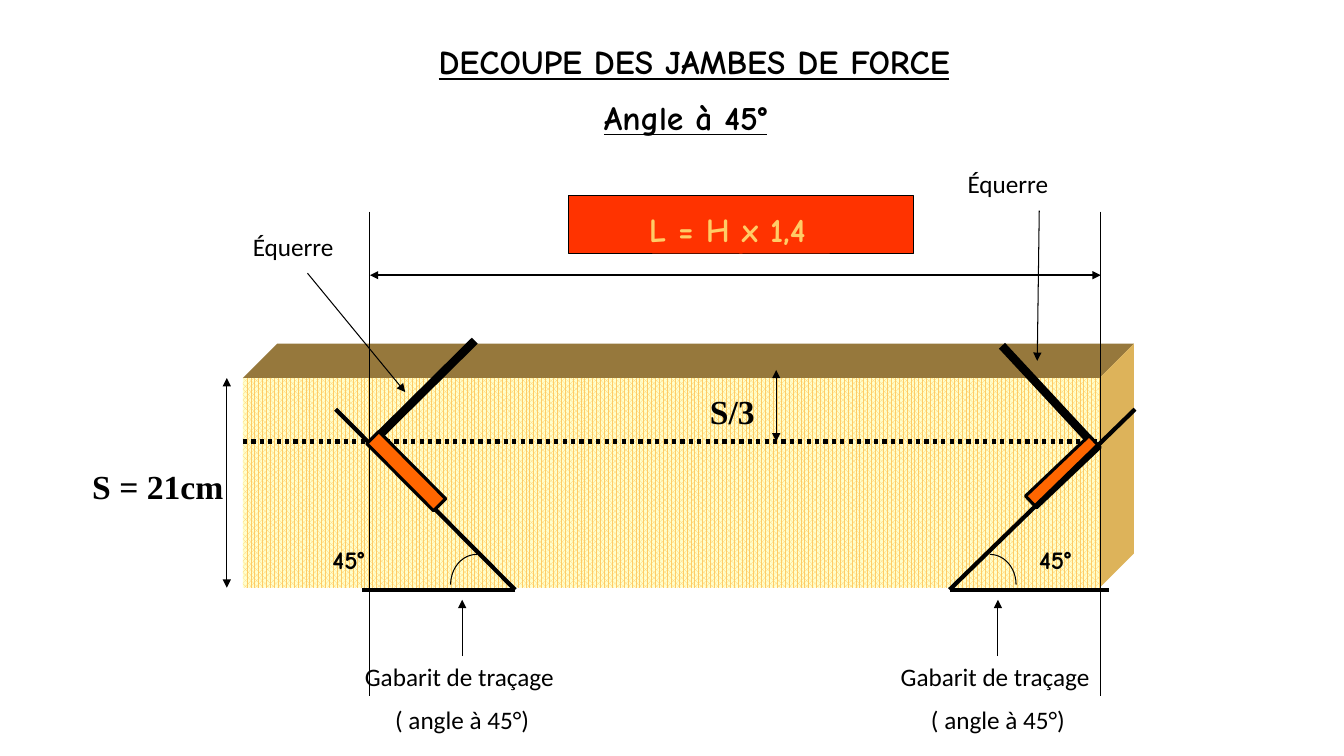
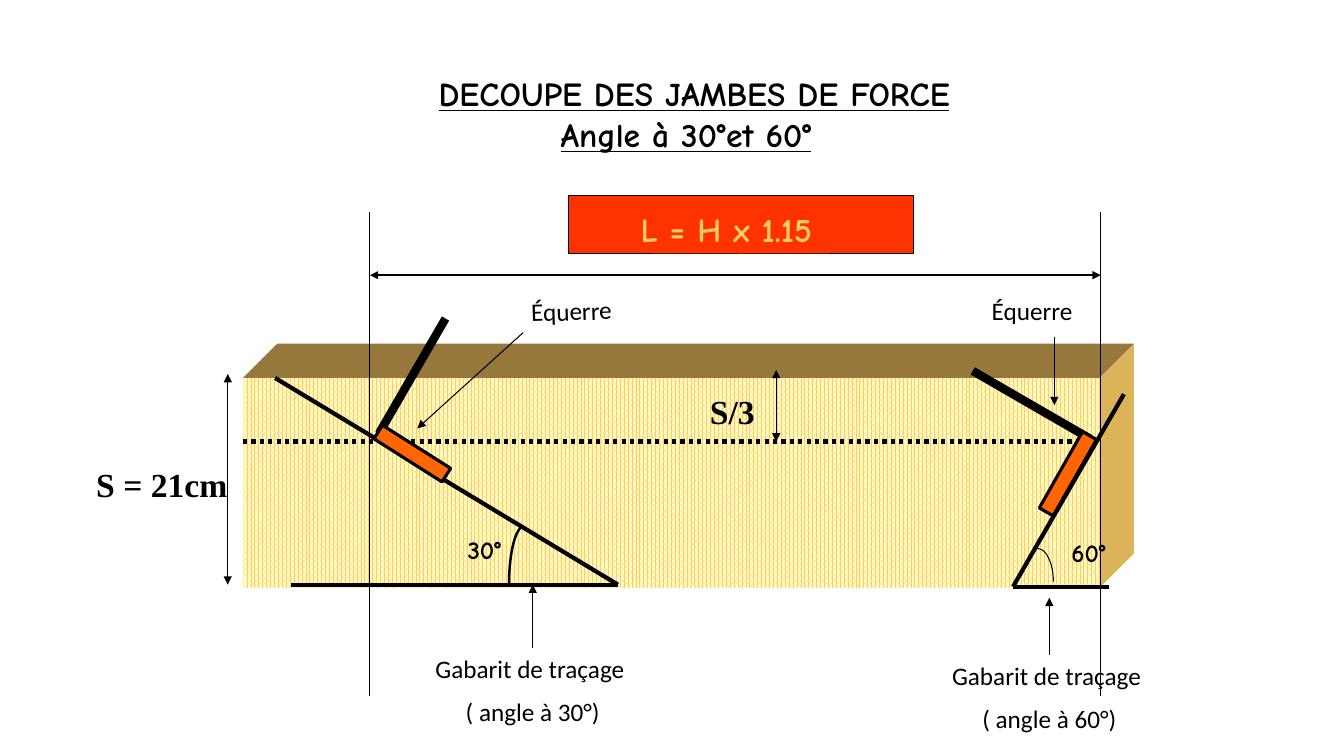
from dataclasses import dataclass
from typing import NamedTuple, Optional

from lxml.etree import SubElement
from pptx import Presentation
from pptx.dml.color import RGBColor
from pptx.enum.dml import MSO_LINE_DASH_STYLE as Dash, MSO_PATTERN_TYPE as Pattern
from pptx.enum.shapes import MSO_CONNECTOR_TYPE as Link, MSO_SHAPE as Preset
from pptx.enum.text import MSO_ANCHOR as Anchor, MSO_AUTO_SIZE as AutoSize, PP_ALIGN as Align
from pptx.oxml.ns import qn
from pptx.shapes.autoshape import Shape
from pptx.shapes.connector import Connector
from pptx.slide import Slide
from pptx.text.text import TextFrame
from pptx.util import Emu, Inches, Pt

# The grid has square cells; every length below is a number of cells.
CELL = Inches(0.1)
COLUMNS, ROWS = 133.33, 75

COLORS = {
    "ink": "000000",
    "wood": "FFCC66",
    "grain": "FFFFCC",
    "wood_top": "96783C",
    "wood_end": "DDB35A",
    "formula": "FF3300",
    "handle": "FF6600",
}

Point = tuple[float, float]


class Box(NamedTuple):
    left: float
    top: float
    width: float
    height: float


class TextStyle(NamedTuple):
    font: str
    size: int
    color: str = "ink"
    bold: bool = False
    underline: bool = False
    centred: bool = True
    wrap: bool = False


HEADING = TextStyle("Comic Neue", 24, bold=True, underline=True)
FORMULA = TextStyle("Comic Neue", 24, "wood", bold=True)
DIMENSION = TextStyle("Times New Roman", 24, bold=True)
ANGLE = TextStyle("Comic Neue", 18, bold=True, centred=False, wrap=True)
CAPTION = TextStyle("Calibri", 18, wrap=True)
TOOL_NAME = CAPTION._replace(centred=False)

BEAM = Box(24.1, 37.5, 85, 20.8)
BEAM_DEPTH = 3.4
CUT_LEFT, CUT_RIGHT = 36.7, 109.2
THIRD_ROW = 43.8
THIN, MEDIUM, THICK, BLADE = 0.75, 1.5, 3, 6


def cells(count: float) -> Emu:
    return Emu(round(count * CELL))


def rgb(name: str) -> RGBColor:
    return RGBColor.from_string(COLORS[name])


def write_text(frame: TextFrame, lines: tuple[str, ...], style: TextStyle) -> None:
    frame.word_wrap = style.wrap
    frame.auto_size = AutoSize.SHAPE_TO_FIT_TEXT
    frame.vertical_anchor = Anchor.TOP
    for index, line in enumerate(lines):
        para = frame.add_paragraph() if index else frame.paragraphs[0]
        para.alignment = Align.CENTER if style.centred else Align.LEFT
        if index:
            para.space_before = Pt(style.size / 2)
        span = para.add_run()
        span.text = line
        span.font.name = style.font
        span.font.size = Pt(style.size)
        span.font.bold = style.bold
        span.font.underline = style.underline
        span.font.color.rgb = rgb(style.color)


def add_label(page: Slide, box: Box, style: TextStyle, *lines: str) -> Shape:
    label = page.shapes.add_textbox(*map(cells, box))
    write_text(label.text_frame, lines, style)
    return label


def add_line(page: Slide, start: Point, end: Point, width: float = THIN,
             head: bool = False, tail: bool = False, dash: Optional[Dash] = None) -> Connector:
    line = page.shapes.add_connector(Link.STRAIGHT, *map(cells, (*start, *end)))
    line.line.width = Pt(width)
    line.line.color.rgb = rgb("ink")
    if dash is not None:
        line.line.dash_style = dash
    properties = line.element.spPr
    outline = properties.find(qn("a:ln"))
    for tag, wanted in (("a:headEnd", head), ("a:tailEnd", tail)):
        if wanted:
            SubElement(outline, qn(tag)).set("type", "triangle")
    SubElement(properties, qn("a:effectLst"))
    return line


def add_block(page: Slide, box: Box, color: str, width: float) -> Shape:
    """Add a plain rectangle with an ink outline."""
    block = page.shapes.add_shape(Preset.RECTANGLE, *map(cells, box))
    block.shadow.inherit = False
    block.fill.solid()
    block.fill.fore_color.rgb = rgb(color)
    block.line.color.rgb = rgb("ink")
    block.line.width = Pt(width)
    return block


@dataclass(frozen=True)
class SetSquare:
    """A set square: a black blade, an orange handle, and its name with an arrow."""
    blade: tuple[Point, Point]
    handle: Box
    handle_turn: float
    arrow: tuple[Point, Point]
    name_box: Box
    name_turn: float = 0

    def draw(self, page: Slide) -> None:
        add_line(page, *self.blade, width=BLADE)
        add_block(page, self.handle, "handle", 2.25).rotation = self.handle_turn
        add_line(page, *self.arrow, tail=True)
        add_label(page, self.name_box, TOOL_NAME, "Équerre").rotation = self.name_turn


@dataclass(frozen=True)
class Gauge:
    """A marking gauge: two lines from a corner, the angle's arc, and a caption."""
    angle: str
    corner: Point
    slope_end: Point
    base_end: float
    arc_center: Point
    arc_radii: Point
    angle_box: Box
    caption_box: Box
    arrow_tip: float
    arc_width: float = THIN

    def draw(self, page: Slide) -> None:
        add_line(page, self.corner, self.slope_end, THICK)
        add_line(page, self.corner, (self.base_end, self.corner[1]), THICK)
        self.draw_arc(page)
        add_label(page, self.angle_box, ANGLE, self.angle)
        caption = add_label(page, self.caption_box, CAPTION,
                            "Gabarit de traçage ", f"( angle à {self.angle})")
        middle = self.caption_box.left + self.caption_box.width / 2
        arrow = add_line(page, (middle, self.caption_box.top), (middle, self.arrow_tip), tail=True)
        arrow.begin_connect(caption, 0)

    def draw_arc(self, page: Slide) -> None:
        (x, y), (across, down) = self.arc_center, self.arc_radii
        box = Box(x - across, y - down, 2 * across, 2 * down)
        arc = page.shapes.add_shape(Preset.ARC, *map(cells, box))
        if self.base_end < self.corner[0]:
            # Angles count in units of 1/0.6 degree: from 180 to 270 degrees.
            arc.adjustments[0], arc.adjustments[1] = 108, 162
        arc.shadow.inherit = False
        arc.fill.background()
        arc.line.color.rgb = rgb("ink")
        arc.line.width = Pt(self.arc_width)


@dataclass(frozen=True)
class Lesson:
    title_top: float
    subtitle: str
    subtitle_box: Box
    formula: str
    formula_box: Box
    height_line: tuple[Point, Point]
    height_box: Box
    tools: tuple[SetSquare | Gauge, ...]


LESSONS = (
    Lesson(
        3.6, "Angle à 45°", Box(57.2, 9.1, 21.6, 5),
        "L = H x 1,4", Box(61.3, 20.2, 21.7, 5),
        ((22.5, 37.5), (22.5, 58.3)), Box(7.9, 45.7, 15.5, 5.1),
        (
            Gauge("45°", (51.1, 58.5), (33.3, 40.6), 35.9, (47.3, 58), (2.6, 3),
                  Box(32, 53.5, 11.5, 4), Box(33.6, 65.1, 24.5, 8.5), 59.5),
            SetSquare(((37, 43.8), (47.1, 33.8)), Box(35.6, 45.9, 9.4, 1.7), 45.2,
                      ((30.5, 27.1), (40.2, 38.9)), Box(24.1, 22.5, 11, 4)),
            SetSquare(((108.5, 44.1), (99.4, 34.3)), Box(101.1, 46, 8.7, 1.6), 316.5,
                      ((103.1, 20.9), (102.9, 35.8)), Box(95, 16.2, 12.6, 4)),
            Gauge("45°", (94.2, 58.5), (112.6, 40.6), 110, (98.2, 58), (2.6, 3),
                  Box(102.1, 53.5, 11.8, 4), Box(86.4, 65.1, 25.2, 8.5), 59.5),
        ),
    ),
    Lesson(
        6.7, "Angle à 30°et 60°", Box(51.8, 10.8, 32.5, 5),
        "L = H x 1.15", Box(60.1, 20.2, 23.9, 5.1),
        ((22.6, 37.1), (22.6, 58)), Box(8.3, 45.5, 15.5, 5.1),
        (
            SetSquare(((108.1, 43.5), (96.5, 36.8)), Box(101.6, 46.2, 8.7, 1.6), 299.5,
                      ((104.6, 33.4), (104.6, 40.2)), Box(97.4, 28.8, 12.6, 4)),
            Gauge("60°", (100.5, 58.2), (111.5, 39.1), 110, (102.9, 57.7), (1.6, 3.3),
                  Box(105.3, 52.8, 7.1, 4), Box(91.5, 65, 25.2, 8.5), 59.3),
            Gauge("30°", (61.3, 58), (27.3, 37.5), 28.9, (52, 58), (1.5, 5.8),
                  Box(45.4, 52.5, 7.7, 4), Box(40.6, 64.3, 24.5, 8.5), 58, 1.75),
            SetSquare(((37.6, 43), (44.2, 31.6)), Box(36.9, 44.2, 8, 1.6), 32.3,
                      ((51.9, 33), (41.4, 42.5)), Box(51.7, 28.8, 11.6, 4), 358.2),
        ),
    ),
)


def draw_beam(page: Slide) -> None:
    left, top = BEAM.left, BEAM.top
    right, bottom = left + BEAM.width, top + BEAM.height
    back_right, back_top = right + BEAM_DEPTH, top - BEAM_DEPTH
    faces = {
        "wood_top": ((left, top), (left + BEAM_DEPTH, back_top), (back_right, back_top), (right, top)),
        "wood_end": ((right, top), (back_right, back_top),
                     (back_right, bottom - BEAM_DEPTH), (right, bottom)),
    }
    for color, corners in faces.items():
        first, *others = [(cells(x), cells(y)) for x, y in corners]
        outline = page.shapes.build_freeform(*first)
        outline.add_line_segments(others, close=True)
        face = outline.convert_to_shape()
        face.shadow.inherit = False
        face.fill.solid()
        face.fill.fore_color.rgb = rgb(color)
        face.line.fill.background()
    front = page.shapes.add_shape(Preset.RECTANGLE, *map(cells, BEAM))
    front.shadow.inherit = False
    front.fill.patterned()
    front.fill.pattern = Pattern.PERCENT_75
    front.fill.fore_color.rgb = rgb("wood")
    front.fill.back_color.rgb = rgb("grain")
    front.line.fill.background()


def draw_headings(page: Slide, lesson: Lesson) -> None:
    title = page.shapes.title
    title.left, title.top, title.width, title.height = map(cells, (39, lesson.title_top, 59.7, 5))
    write_text(title.text_frame, ("DECOUPE DES JAMBES DE FORCE",), HEADING)
    add_label(page, lesson.subtitle_box, HEADING, lesson.subtitle)


def draw_dimensions(page: Slide, lesson: Lesson) -> None:
    add_label(page, Box(69.4, 38.3, 6.5, 5.1), DIMENSION, "S/3")
    add_line(page, (77, 36.7), (77, THIRD_ROW), head=True, tail=True)
    add_line(page, (BEAM.left, THIRD_ROW), (CUT_RIGHT, THIRD_ROW), THICK, dash=Dash.ROUND_DOT)
    for column in (CUT_LEFT, CUT_RIGHT):
        add_line(page, (column, 21), (column, 69))
    add_line(page, (CUT_LEFT, 27.3), (CUT_RIGHT, 27.3), MEDIUM, head=True, tail=True)
    add_block(page, Box(56.4, 19.4, 34.2, 5.8), "formula", THIN)
    add_label(page, lesson.formula_box, FORMULA, lesson.formula)
    add_line(page, *lesson.height_line, head=True, tail=True)
    add_label(page, lesson.height_box, DIMENSION, "S = 21cm")


def main() -> None:
    deck = Presentation()
    deck.slide_width, deck.slide_height = cells(COLUMNS), cells(ROWS)
    title_only = deck.slide_layouts[5]
    for lesson in LESSONS:
        page = deck.slides.add_slide(title_only)
        draw_beam(page)
        draw_headings(page, lesson)
        draw_dimensions(page, lesson)
        for tool in lesson.tools:
            tool.draw(page)
    deck.save("out.pptx")


if __name__ == "__main__":
    main()
